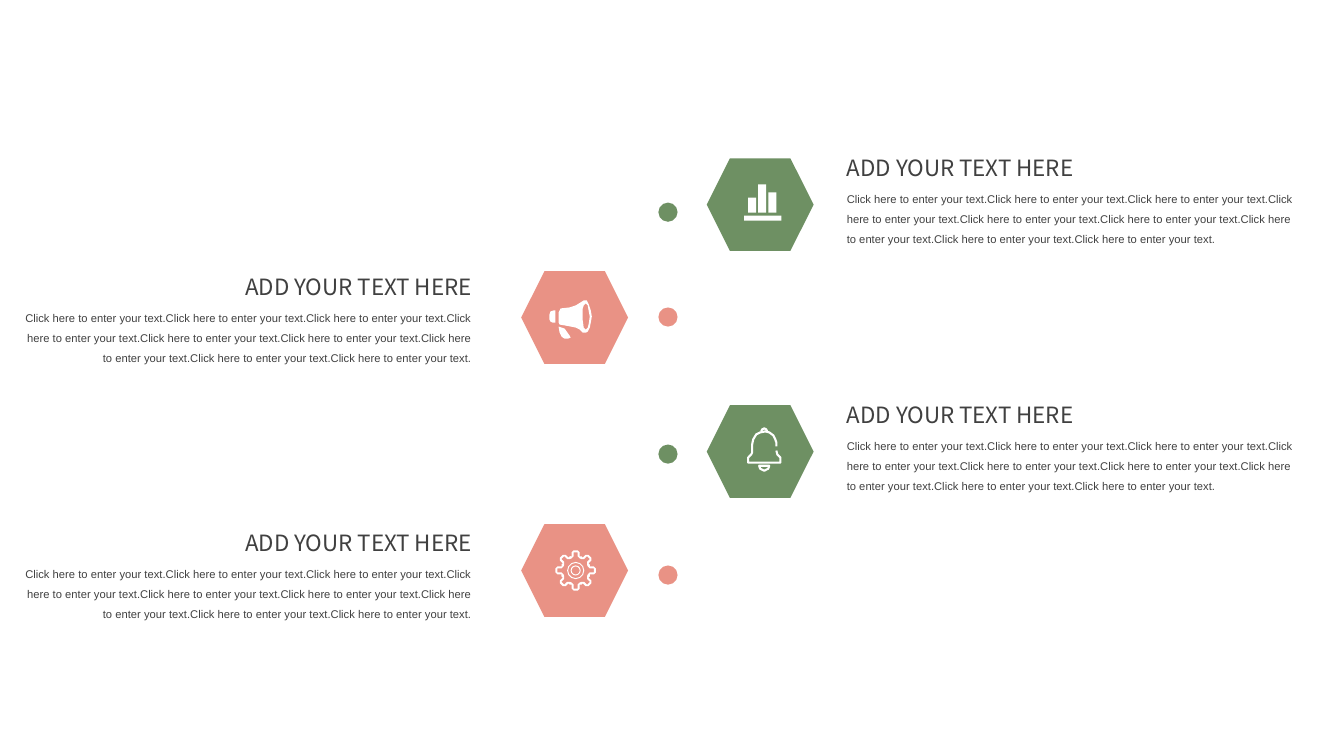
from math import cos, pi, sin

from pptx import Presentation
from pptx.dml.color import RGBColor
from pptx.enum.shapes import MSO_SHAPE
from pptx.enum.text import MSO_AUTO_SIZE, PP_ALIGN
from pptx.util import Inches, Pt

GREEN = RGBColor(0x6E, 0x90, 0x63)
CORAL = RGBColor(0xE9, 0x92, 0x85)
WHITE = RGBColor(0xFF, 0xFF, 0xFF)
GRAY = RGBColor(0x40, 0x40, 0x40)

TITLE = "ADD YOUR TEXT HERE"
BODY = "Click here to enter your text." * 9

prs = Presentation()
prs.slide_width, prs.slide_height = Inches(13.33), Inches(7.5)
s = prs.slides.add_slide(prs.slide_layouts[6])


def add_preset(kind, x, y, w, h, color):
    sp = s.shapes.add_shape(kind, Inches(x), Inches(y), Inches(w), Inches(h))
    sp.shadow.inherit = False
    sp.fill.solid()
    sp.fill.fore_color.rgb = color
    sp.line.fill.background()
    return sp


def add_outline(contours, filled=True, close=True):
    contours = [[(Inches(x), Inches(y)) for x, y in points] for points in contours]
    builder = s.shapes.build_freeform(*contours[0][0])
    for i, points in enumerate(contours):
        if i:
            builder.move_to(*points[0])
        builder.add_line_segments(points[1:], close=close)
    sp = builder.convert_to_shape()
    sp.shadow.inherit = False
    if filled:
        sp.fill.solid()
        sp.fill.fore_color.rgb = WHITE
        sp.line.fill.background()
    else:
        sp.fill.background()
        sp.line.color.rgb = WHITE
        sp.line.width = Pt(1.5)


# Timeline rows: hexagon, dot, title and body, alternating sides
rows = [  # right side, hexagon top, dot top, title top
    (True, 1.57, 2.01, 1.48),
    (False, 2.69, 3.05, 2.66),
    (True, 4.02, 4.41, 3.93),
    (False, 5.2, 5.61, 5.2),
]
for right, hex_y, dot_y, title_y in rows:
    color = GREEN if right else CORAL
    add_preset(MSO_SHAPE.HEXAGON, 7.01 if right else 5.17, hex_y, 1.06, 0.92, color)
    add_preset(MSO_SHAPE.OVAL, 6.53, dot_y, 0.19, 0.19, color)

    texts = [  # text, top, width, height, size, font, spacing, wrap
        (BODY, title_y + 0.31, 4.65, 0.71, 8, "Arial", 1.5, True),
        (TITLE, title_y, 2.6, 0.37, 16, "Noto Sans CJK SC", 1.0, False),
    ]
    for text, y, w, h, size, font, spacing, wrap in texts:
        x = 8.3 if right else 4.78 - w
        tf = s.shapes.add_textbox(Inches(x), Inches(y), Inches(w), Inches(h)).text_frame
        tf.word_wrap = wrap
        tf.auto_size = MSO_AUTO_SIZE.SHAPE_TO_FIT_TEXT
        p = tf.paragraphs[0]
        p.text = text
        p.alignment = PP_ALIGN.LEFT if right else PP_ALIGN.RIGHT
        p.line_spacing = spacing
        r = p.runs[0]
        r.font.size = Pt(size)
        r.font.name = font
        r.font.color.rgb = GRAY

# Bar chart icon
for x, y, w, h in [(7.42, 1.96, 0.08, 0.15), (7.52, 1.83, 0.08, 0.28),
                   (7.62, 1.91, 0.08, 0.2), (7.38, 2.14, 0.37, 0.05)]:
    add_preset(MSO_SHAPE.RECTANGLE, x, y, w, h, WHITE)

# Megaphone icon: horn with its opening, handle, back end
horn = [(5.54, 3.14), (5.54, 3.1), (5.56, 3.06), (5.65, 3.05), (5.71, 3.03),
        (5.76, 3), (5.79, 2.98), (5.82, 2.98), (5.84, 3.02), (5.86, 3.08),
        (5.87, 3.14), (5.86, 3.2), (5.85, 3.25), (5.83, 3.29), (5.81, 3.3),
        (5.78, 3.3), (5.75, 3.27), (5.71, 3.25), (5.61, 3.23), (5.55, 3.22),
        (5.54, 3.2)]
opening = [(5.85, 3.14), (5.84, 3.09), (5.83, 3.03), (5.81, 3.01), (5.79, 3.03),
           (5.78, 3.06), (5.78, 3.18), (5.79, 3.25), (5.81, 3.27), (5.83, 3.25),
           (5.84, 3.21)]
handle = [(5.54, 3.24), (5.6, 3.26), (5.65, 3.33), (5.66, 3.35), (5.63, 3.36),
          (5.6, 3.36), (5.57, 3.34), (5.55, 3.3)]
back_end = [(5.51, 3.2), (5.48, 3.2), (5.46, 3.19), (5.45, 3.17), (5.45, 3.12),
            (5.46, 3.09), (5.49, 3.08), (5.51, 3.08)]
for contours in ([horn, opening], [handle], [back_end]):
    add_outline(contours)

# Bell icon: body, crown, clapper
bell = [(7.7, 4.43), (7.7, 4.39), (7.69, 4.36), (7.67, 4.32), (7.63, 4.29),
        (7.59, 4.28), (7.54, 4.29), (7.5, 4.31), (7.47, 4.36), (7.46, 4.41),
        (7.46, 4.49), (7.45, 4.51), (7.42, 4.54), (7.42, 4.59), (7.74, 4.59),
        (7.74, 4.54), (7.71, 4.51), (7.7, 4.47)]
crown = [(7.55, 4.28), (7.56, 4.26), (7.58, 4.25), (7.6, 4.26), (7.61, 4.28)]
clapper = [(7.53, 4.62), (7.54, 4.65), (7.56, 4.66), (7.58, 4.67), (7.6, 4.66),
           (7.62, 4.65), (7.63, 4.62)]
for points, close in [(bell, False), (crown, False), (clapper, True)]:
    add_outline([points], filled=False, close=close)

# Gear icon: eight teeth turned around the centre, then two rings
GEAR_X, GEAR_Y = 5.71, 5.66
outer_tooth = [(0.14, -0.04), (0.18, -0.04), (0.2, -0.02),
               (0.2, 0.02), (0.18, 0.04), (0.14, 0.04), (0.14, 0.06)]
inner_tooth = [(0.12, -0.04), (0.14, -0.02), (0.18, -0.02),
               (0.18, 0.02), (0.14, 0.02), (0.12, 0.04)]
gear = []
for tooth in (outer_tooth, inner_tooth):
    gear.append([(GEAR_X + x * cos(a) - y * sin(a), GEAR_Y + x * sin(a) + y * cos(a))
                 for a in (i * pi / 4 for i in range(8)) for x, y in tooth])
add_outline(gear)
for d in (0.17, 0.1):
    ring = add_preset(MSO_SHAPE.DONUT, GEAR_X - d / 2, GEAR_Y - d / 2, d, d, WHITE)
    ring.adjustments[0] = 0.01 / d

prs.save("out.pptx")
